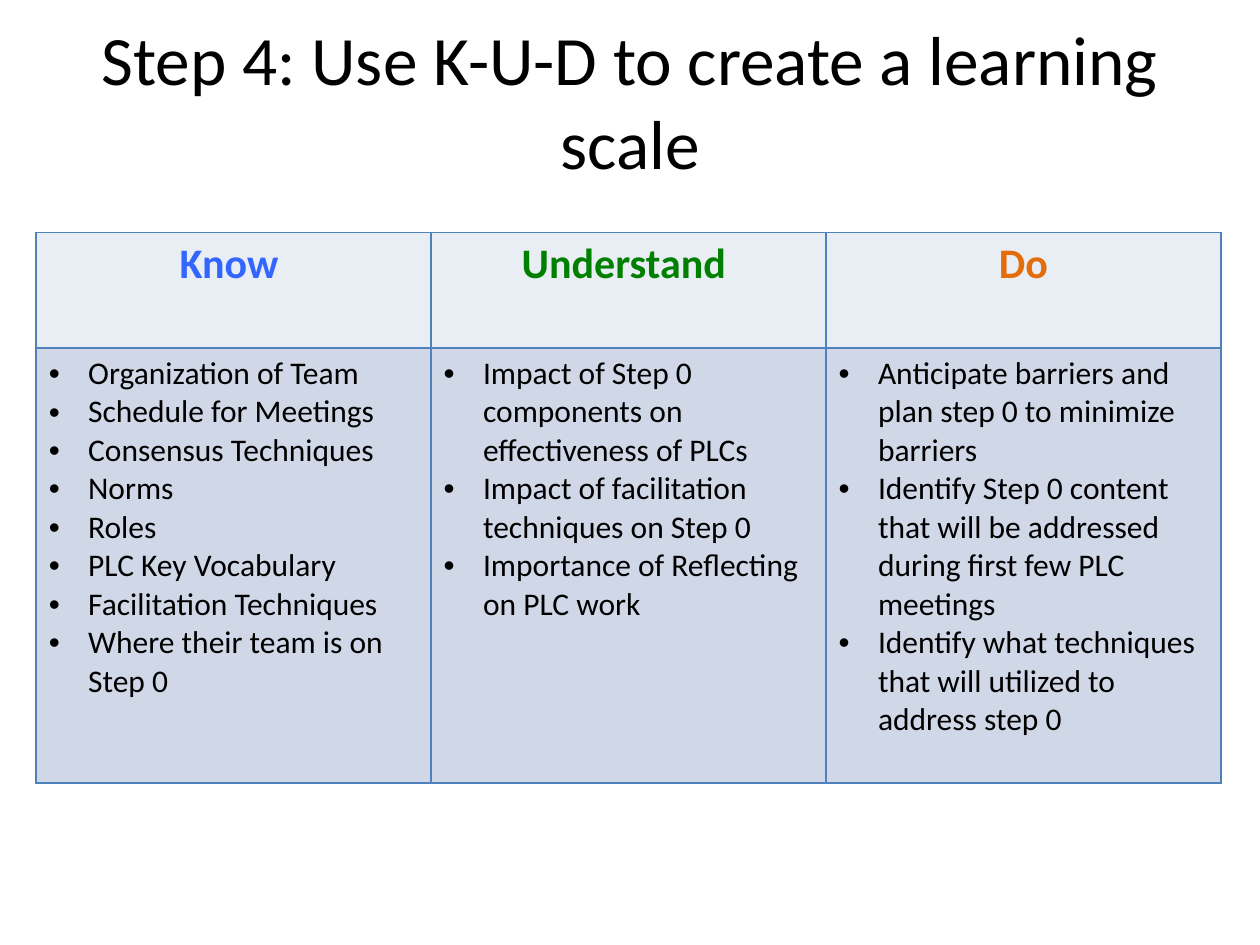
import pptx
import pptx.dml.color
import pptx.enum.text
import pptx.oxml
import pptx.oxml.ns
import pptx.util
from pptx.util import Pt

FONT = "Calibri"
BLACK, BORDER = "000000", "4F81BD"
HEADER_FILL, BODY_FILL = "E9EDF4", "D0D8E8"
HEADER_HEIGHT = 66
BULLET_INDENT = 22.5

# Heading, heading colour, bullet points
COLUMNS = [
    ("Know ", "3366FF", [
        "Organization of Team",
        "Schedule for Meetings",
        "Consensus Techniques",
        "Norms",
        "Roles",
        "PLC Key Vocabulary",
        "Facilitation Techniques",
        "Where their team is on Step 0",
    ]),
    ("Understand ", "008000", [
        "Impact of Step 0 components on effectiveness of PLCs",
        "Impact of facilitation techniques on Step 0",
        "Importance of Reflecting on PLC work",
    ]),
    ("Do", "E46C0A", [
        "Anticipate barriers and plan step 0 to minimize barriers",
        "Identify Step 0 content that will be addressed during first few PLC meetings",
        "Identify what techniques that will utilized to address step 0",
    ]),
]


def color(value):
    return pptx.dml.color.RGBColor.from_string(value)


def add_bullet(para):
    properties = para._p.get_or_add_pPr()
    properties.set("marL", str(Pt(BULLET_INDENT)))
    properties.set("indent", str(-Pt(BULLET_INDENT)))
    for tag, name, value in (("buFont", "typeface", "Arial"), ("buChar", "char", "•")):
        item = pptx.oxml.parse_xml(
            f'<a:{tag} {pptx.oxml.ns.nsdecls("a")} {name}="{value}"/>')
        properties.append(item)


def write(frame, lines, size=18, fill=BLACK, bold=False, centered=False, bullets=False):
    frame.word_wrap = True
    for index, line in enumerate(lines):
        para = frame.add_paragraph() if index else frame.paragraphs[0]
        if bullets:
            add_bullet(para)
        align = pptx.enum.text.PP_ALIGN
        para.alignment = align.CENTER if centered else align.LEFT
        span = para.add_run()
        span.text = line
        span.font.name = FONT
        span.font.size = Pt(size)
        span.font.bold = bold
        span.font.color.rgb = color(fill)


def style_cell(cell, fill):
    # Borders come before the fill in the cell properties
    properties = cell._tc.get_or_add_tcPr()
    for side in ("lnL", "lnR", "lnT", "lnB"):
        properties.append(pptx.oxml.parse_xml(
            f'<a:{side} {pptx.oxml.ns.nsdecls("a")} w="{Pt(1)}"><a:solidFill>'
            f'<a:srgbClr val="{BORDER}"/></a:solidFill></a:{side}>'))
    cell.fill.solid()
    cell.fill.fore_color.rgb = color(fill)


def add_title(page, left, top, width, height):
    box = page.shapes.add_textbox(Pt(left), Pt(top), Pt(width), Pt(height))
    box.text_frame.vertical_anchor = pptx.enum.text.MSO_ANCHOR.MIDDLE
    write(box.text_frame, ["Step 4: Use K-U-D to create a learning scale"],
          size=39.6, centered=True)


def add_goals_table(page, left, top, width, height):
    table = page.shapes.add_table(
        2, len(COLUMNS), Pt(left), Pt(top), Pt(width), Pt(height)).table
    table.rows[0].height = Pt(HEADER_HEIGHT)
    table.rows[1].height = Pt(height - HEADER_HEIGHT)
    for index, (heading, heading_color, points) in enumerate(COLUMNS):
        table.columns[index].width = Pt(width / len(COLUMNS))
        header, body = table.cell(0, index), table.cell(1, index)
        style_cell(header, HEADER_FILL)
        style_cell(body, BODY_FILL)
        write(header.text_frame, [heading], size=24, fill=heading_color,
              bold=True, centered=True)
        write(body.text_frame, points, bullets=True)


def main():
    deck = pptx.Presentation()
    deck.slide_width, deck.slide_height = Pt(720), Pt(540)
    page = deck.slides.add_slide(deck.slide_layouts[6])
    add_title(page, 36, 12, 648, 90)
    add_goals_table(page, 20.7, 133, 677, 314.5)
    deck.save("out.pptx")


if __name__ == "__main__":
    main()
